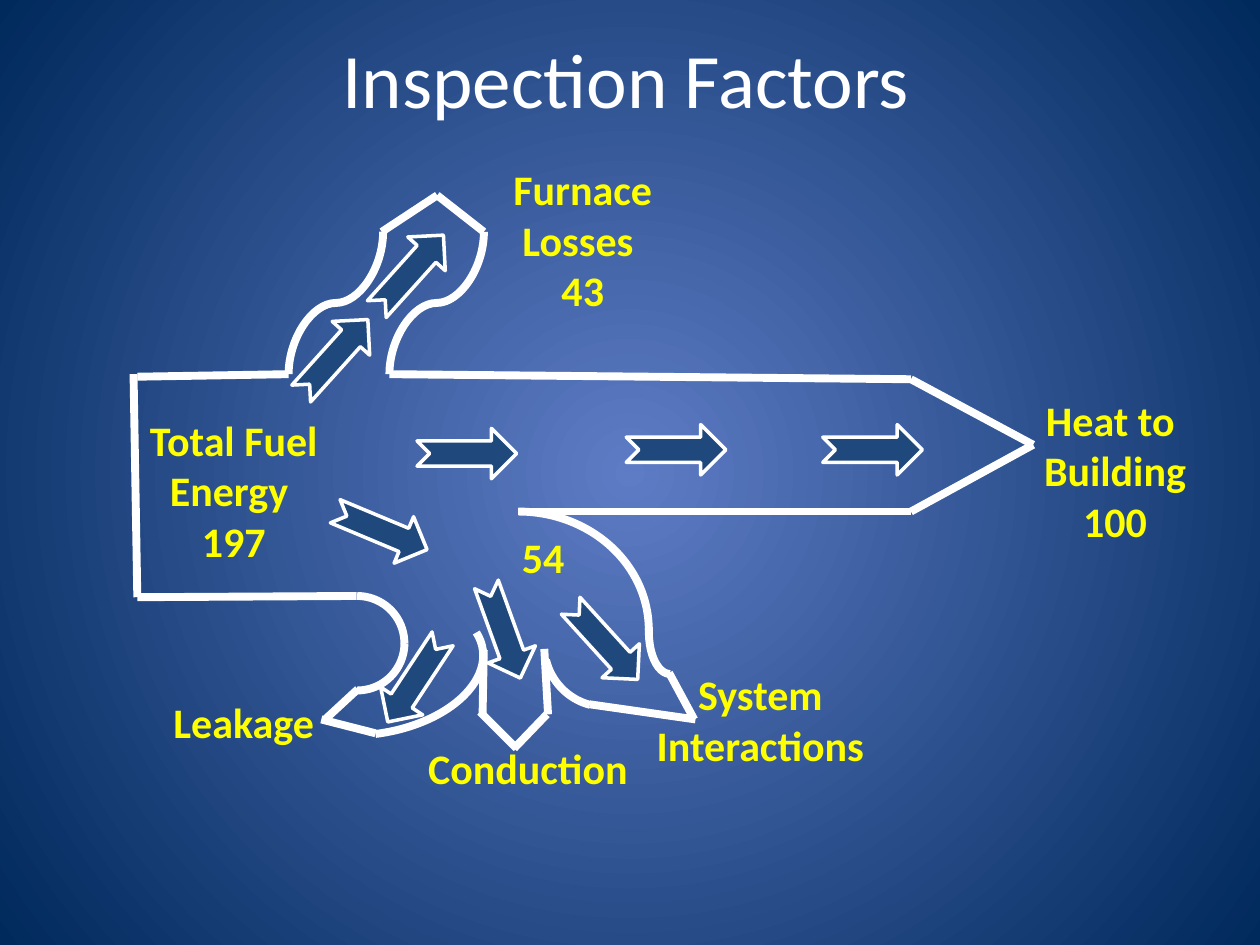
from dataclasses import dataclass

from lxml import etree
from pptx import Presentation
from pptx import util as u
from pptx.dml.color import RGBColor
from pptx.enum import dml, shapes, text
from pptx.oxml.ns import qn


@dataclass(frozen=True)
class Theme:
    """Colours, font and sizes of the slide."""
    font: str = "Calibri"
    title_size: int = 44
    label_size: int = 24
    white: RGBColor = RGBColor(0xFF, 0xFF, 0xFF)
    label: RGBColor = RGBColor(0xFF, 0xFF, 0x00)
    arrow: RGBColor = RGBColor(0x1F, 0x49, 0x7D)
    center: RGBColor = RGBColor(0x5E, 0x7C, 0xC5)
    edge: RGBColor = RGBColor(0x00, 0x29, 0x5C)
    outline_width: float = 4.5
    arrow_width: float = 2
    arrow_size: tuple = (0.79, 0.4)


class FlowSlide:
    """Draws the elements of an energy flow diagram on one slide."""

    def __init__(self, prs, theme):
        self.theme = theme
        self.s = prs.slides.add_slide(prs.slide_layouts[5])

    def background(self):
        fill = self.s.background.fill
        fill.gradient()
        for stop, color in zip(fill.gradient_stops, (self.theme.center, self.theme.edge)):
            stop.color.rgb = color
        first, last = fill.gradient_stops
        first.position, last.position = 0, 1
        grad = self.s.element.find(".//" + qn("a:gradFill"))
        grad.remove(grad.find(qn("a:lin")))
        circle = etree.SubElement(grad, qn("a:path"), path="circle")
        etree.SubElement(circle, qn("a:fillToRect"), dict.fromkeys("ltrb", "50000"))

    def title(self, words, left, top, width, height):
        sp = self.s.shapes.title
        sp.left, sp.top, sp.width, sp.height = map(u.Inches, (left, top, width, height))
        sp.text_frame.vertical_anchor = text.MSO_ANCHOR.MIDDLE
        self.set_text(sp.text_frame, words, self.theme.title_size, self.theme.white)

    def set_text(self, tf, words, size, color, bold=False):
        tf.text = words
        for p in tf.paragraphs:
            p.alignment = text.PP_ALIGN.CENTER
            p.font.name, p.font.size, p.font.bold = self.theme.font, u.Pt(size), bold
            p.font.color.rgb = color

    def label(self, words, left, top, width, height):
        box = self.s.shapes.add_textbox(*map(u.Inches, (left, top, width, height)))
        tf = box.text_frame
        tf.word_wrap = False
        tf.auto_size = text.MSO_AUTO_SIZE.SHAPE_TO_FIT_TEXT
        self.set_text(tf, words, self.theme.label_size, self.theme.label, True)

    def stroke(self, sp, width):
        sp.line.fill.solid()
        sp.line.color.rgb = self.theme.white
        sp.line.dash_style = dml.MSO_LINE.SOLID
        sp.line.width = u.Pt(width)

    def connector(self, kind, *ends):
        cxn = self.s.shapes.add_connector(kind, *map(u.Inches, ends))
        self.stroke(cxn, self.theme.outline_width)
        etree.SubElement(cxn.element.spPr, qn("a:effectLst"))
        return cxn

    def line(self, *ends):
        self.connector(shapes.MSO_CONNECTOR.STRAIGHT, *ends)

    def s_curve(self, x1, y1, x2, y2):
        cx, cy = (x1 + x2) / 2, (y1 + y2) / 2
        dx, dy = abs(y2 - y1) / 2, abs(x2 - x1) / 2
        cxn = self.connector(shapes.MSO_CONNECTOR.CURVE, cx + dx, cy + dy, cx - dx, cy - dy)
        cxn.element.spPr.find(qn("a:xfrm")).set("rot", str(90 * 60000))

    def shape(self, kind, left, top, width, height, rotation, stroke):
        sp = self.s.shapes.add_shape(kind, *map(u.Inches, (left, top, width, height)))
        sp.rotation = rotation
        sp.shadow.inherit = False
        self.stroke(sp, stroke)
        return sp

    def arc(self, left, top, width, height, rotation=0, angles=(), flip=False):
        sp = self.shape(shapes.MSO_SHAPE.ARC, left, top, width, height, rotation,
                        self.theme.outline_width)
        sp.fill.background()
        for i, angle in enumerate(angles):
            sp.adjustments[i] = angle * 0.6
        if flip:
            sp.element.spPr.find(qn("a:xfrm")).set("flipV", "1")

    def arrow(self, left, top, rotation=0):
        sp = self.shape(shapes.MSO_SHAPE.NOTCHED_RIGHT_ARROW, left, top,
                        *self.theme.arrow_size, rotation, self.theme.arrow_width)
        sp.fill.solid()
        sp.fill.fore_color.rgb = self.theme.arrow


LINES = [
    (3.09, 2.97, 7.23, 3.01), (4.11, 4.06, 7.23, 4.06),
    (7.23, 3.01, 8.2, 3.53), (7.23, 4.06, 8.2, 3.53),
    (3.03, 1.84, 3.47, 1.55), (3.84, 1.84, 3.47, 1.55),
    (1.09, 2.99, 2.29, 2.97), (1.09, 4.74, 2.83, 4.73), (1.09, 4.74, 1.06, 2.97),
    (3.84, 5.16, 3.83, 5.67), (4.32, 5.15, 4.35, 5.67),
    (4.68, 5.59, 5.52, 5.71), (5.31, 5.34, 5.51, 5.71),
    (4.08, 5.94, 4.34, 5.67), (4.1, 5.94, 3.81, 5.65),
    (2.84, 5.47, 2.58, 5.71), (2.98, 5.82, 2.55, 5.71),
]
CURVES = [(3.09, 2.97, 3.84, 1.84), (2.29, 2.97, 3.04, 1.84)]
ARCS = [
    (2.46, 4.73, 0.75, 0.75), (2.46, 4.73, 0.75, 0.75, 90),
    (3.08, 4.06, 2.07, 1.88), (5.15, 4.62, 0.37, 0.73, 183.1),
    (1.99, 4.73, 1.85, 1.1, 172.6, (89.35, 189.29), True),
    (4.32, 4.64, 0.97, 0.97, 166.4, (298.39, 0.24)),
]
LABELS = [
    ("Heat to \nBuilding\n100", 8.18, 3.08, 1.34, 1.31),
    ("Furnace\nLosses \n43", 3.97, 1.25, 1.31, 1.31),
    ("Total Fuel\nEnergy \n197", 1.08, 3.24, 1.55, 1.31),
    ("System\nInteractions", 5.1, 5.26, 1.87, 0.91),
    ("Conduction", 3.29, 5.84, 1.8, 0.5),
    ("Leakage", 1.27, 5.48, 1.33, 0.5),
    ("54", 4.04, 4.17, 0.54, 0.5),
]
ARROWS = [
    (2.26, 2.63, 312), (2.86, 1.96, 312),
    (6.53, 3.37), (4.97, 3.37), (3.31, 3.4),
    (4.4, 4.9, 47.7), (3.6, 4.81, 70.1), (2.9, 5.2, 123.4), (2.63, 4.01, 22.7),
]


def main():
    prs = Presentation()
    prs.slide_width, prs.slide_height = u.Inches(10), u.Inches(7.5)
    flow = FlowSlide(prs, Theme())
    flow.background()
    flow.title("Inspection Factors", 0.47, -0.01, 9, 1.25)
    for draw, items in (
        (flow.line, LINES), (flow.s_curve, CURVES), (flow.arc, ARCS),
        (flow.label, LABELS), (flow.arrow, ARROWS),
    ):
        for item in items:
            draw(*item)
    prs.save("out.pptx")


if __name__ == "__main__":
    main()
